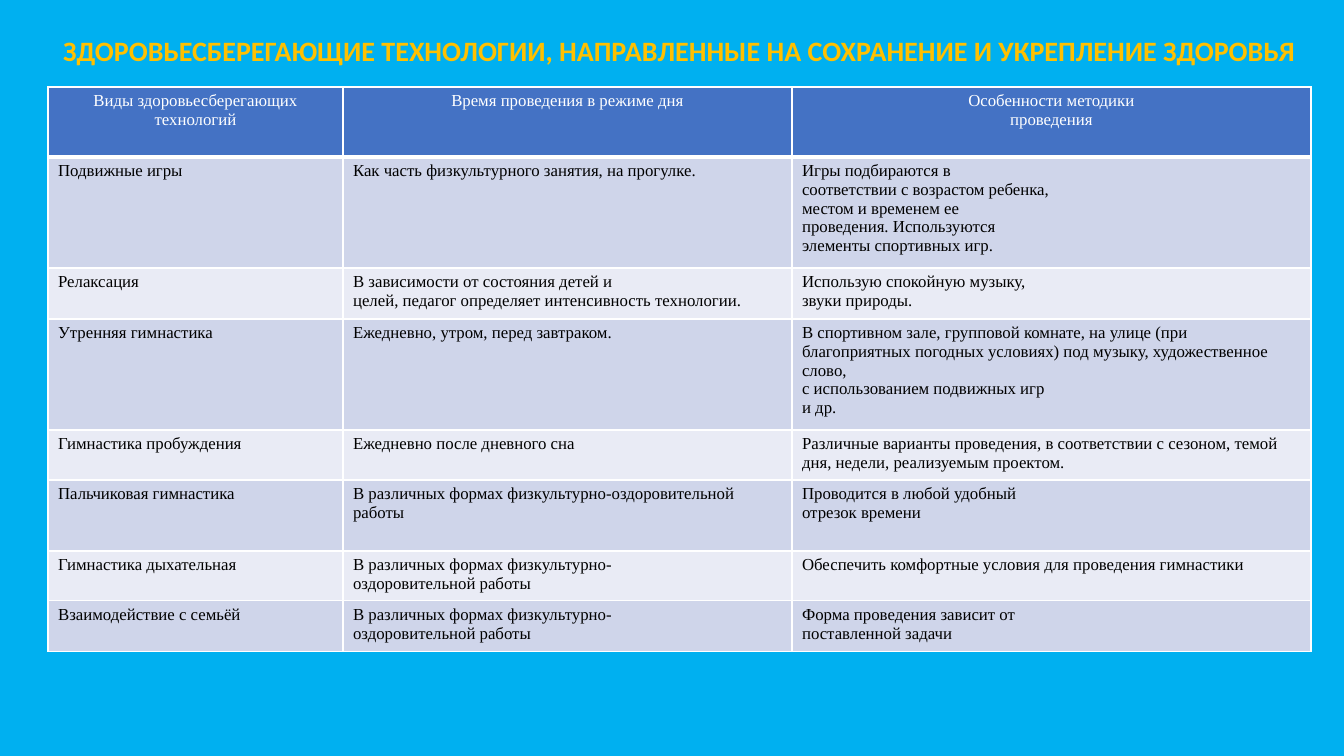
from dataclasses import dataclass

from pptx import Presentation
from pptx.dml.color import RGBColor
from pptx.enum.text import MSO_ANCHOR as Anchor, MSO_AUTO_SIZE as Auto, PP_ALIGN as Align
from pptx.oxml import parse_xml
from pptx.oxml.ns import nsdecls
from pptx.util import Emu, Pt

SKY = RGBColor(0x00, 0xB0, 0xF0)
GOLD = RGBColor(0xFF, 0xC0, 0x00)
BLUE = RGBColor(0x44, 0x72, 0xC4)
DARK = RGBColor(0xCF, 0xD5, 0xEA)
PALE = RGBColor(0xE9, 0xEB, 0xF5)
WHITE = RGBColor(0xFF, 0xFF, 0xFF)
BLACK = RGBColor(0x00, 0x00, 0x00)

LEFT, WIDTH = 48, 1263
COLS = (295, 449, 519)
THIN, THICK = 1, 3
TITLE = "ЗДОРОВЬЕСБЕРЕГАЮЩИЕ ТЕХНОЛОГИИ, НАПРАВЛЕННЫЕ НА СОХРАНЕНИЕ И УКРЕПЛЕНИЕ ЗДОРОВЬЯ"


@dataclass
class Row:
    height: int
    kind: list[str]
    time: list[str]
    method: list[str]


ROWS = [
    Row(70, ["Виды здоровьесберегающих", "технологий"],
        ["Время проведения в режиме дня"],
        ["Особенности методики", "проведения"]),
    Row(111, ["Подвижные игры"],
        ["Как часть физкультурного занятия, на прогулке."],
        ["Игры подбираются в", "соответствии с возрастом ребенка,", "местом и временем ее",
         "проведения. Используются", "элементы спортивных игр."]),
    Row(51, ["Релаксация"],
        ["В зависимости от состояния детей и",
         "целей, педагог определяет интенсивность технологии."],
        ["Использую спокойную музыку,", "звуки природы."]),
    Row(111, ["Утренняя гимнастика"],
        ["Ежедневно, утром, перед завтраком."],
        ["В спортивном зале, групповой комнате, на улице (при благоприятных погодных "
         "условиях) под музыку, художественное слово,",
         "с использованием подвижных игр", "и др."]),
    Row(50, ["Гимнастика пробуждения"],
        ["Ежедневно после дневного сна"],
        ["Различные варианты проведения, в соответствии с сезоном, темой дня, недели, "
         "реализуемым проектом."]),
    Row(71, ["Пальчиковая гимнастика"],
        ["В различных формах физкультурно-оздоровительной работы"],
        ["Проводится в любой удобный", "отрезок времени"]),
    Row(50, ["Гимнастика дыхательная"],
        ["В различных формах физкультурно-", "оздоровительной работы"],
        ["Обеспечить комфортные условия для проведения гимнастики"]),
    Row(51, ["Взаимодействие с семьёй"],
        ["В различных формах физкультурно-", "оздоровительной работы"],
        ["Форма проведения зависит от", "поставленной задачи"]),
]


def px(size: int) -> Emu:
    return Emu(round(size * 914400 / 100.8))


def add_run(para, text: str, face: str, size: int, color: RGBColor, bold: bool) -> None:
    run = para.add_run()
    run.text = text
    font = run.font
    font.name, font.size, font.bold = face, Pt(size), bold
    font.color.rgb = color


def add_title(slide) -> None:
    title = slide.shapes.title
    title.left, title.top, title.width, title.height = px(LEFT), px(28), px(WIDTH), px(44)
    frame = title.text_frame
    frame.word_wrap = True
    frame.auto_size = Auto.NONE
    frame.vertical_anchor = Anchor.MIDDLE
    para = frame.paragraphs[0]
    para.alignment = Align.CENTER
    add_run(para, TITLE, "Calibri", 20, GOLD, True)


def add_edge(cell, side: str, width: int) -> None:
    props = cell._tc.get_or_add_tcPr()
    props.append(parse_xml(
        f'<a:ln{side} {nsdecls("a")} w="{Pt(width)}"><a:solidFill>'
        f'<a:srgbClr val="{WHITE}"/></a:solidFill></a:ln{side}>'))


def fill_cell(cell, lines: list[str], index: int) -> None:
    head = index == 0
    edges = {"L": THIN, "R": THIN, "T": THICK if index == 1 else THIN,
             "B": THICK if head else THIN}
    for side, width in edges.items():
        add_edge(cell, side, width)
    cell.fill.solid()
    cell.fill.fore_color.rgb = BLUE if head else DARK if index % 2 else PALE
    cell.vertical_anchor = Anchor.TOP
    frame = cell.text_frame
    for spot, line in enumerate(lines):
        para = frame.add_paragraph() if spot else frame.paragraphs[0]
        para.alignment = Align.CENTER if head else Align.LEFT
        add_run(para, line, "Times New Roman", 12, WHITE if head else BLACK, False)


def add_grid(slide) -> None:
    total = sum(row.height for row in ROWS)
    grid = slide.shapes.add_table(
        len(ROWS), len(COLS), px(LEFT), px(87), px(WIDTH), px(total)).table
    for col, width in zip(grid.columns, COLS):
        col.width = px(width)
    for index, row in enumerate(ROWS):
        grid.rows[index].height = px(row.height)
        for spot, lines in enumerate((row.kind, row.time, row.method)):
            fill_cell(grid.cell(index, spot), lines, index)


def main() -> None:
    deck = Presentation()
    deck.slide_width, deck.slide_height = px(1344), px(756)
    slide = deck.slides.add_slide(deck.slide_layouts[5])
    back = slide.background.fill
    back.solid()
    back.fore_color.rgb = SKY
    add_title(slide)
    add_grid(slide)
    deck.save("out.pptx")


if __name__ == "__main__":
    main()
